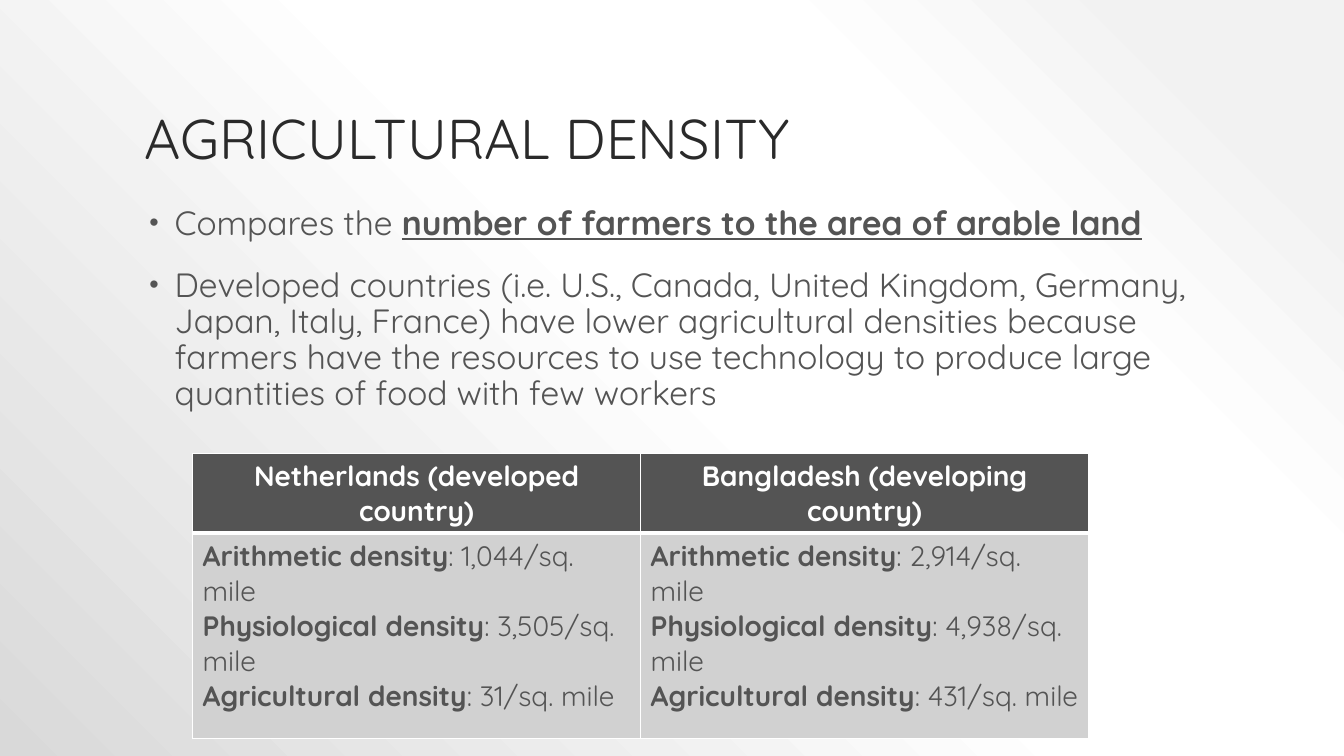
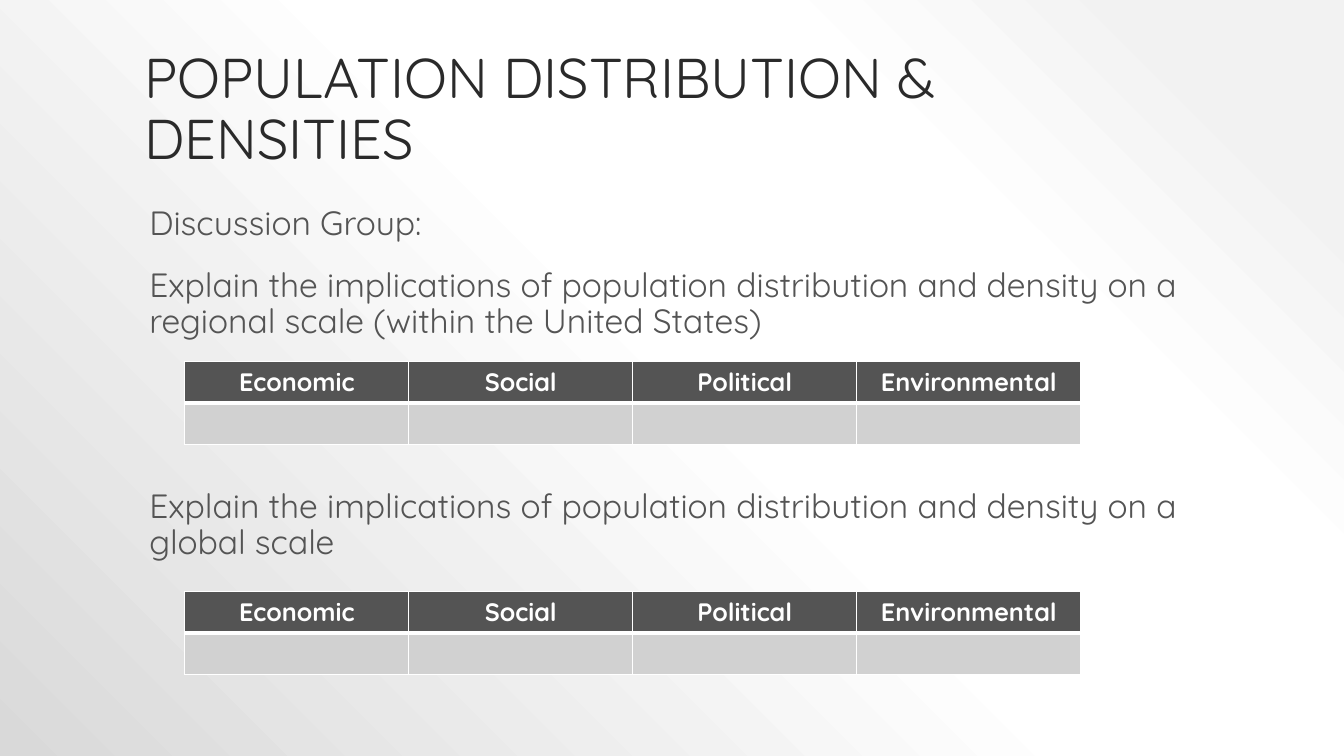
from lxml.etree import SubElement
from pptx import Presentation
from pptx.dml.color import RGBColor
from pptx.enum.text import MSO_ANCHOR as Anchor, PP_ALIGN as Align
from pptx.oxml.ns import qn
from pptx.util import Inches, Pt

WIDTH, HEIGHT = Inches(13.33), Inches(7.5)
FONT = "Quicksand"
COLORS = {
    "title": "2A2A2A",
    "text": "545454",
    "header": "545454",
    "cell": "D1D1D1",
    "white": "FFFFFF",
}
BACKDROP = [(10, "F2F2F2"), (28, "FFFFFF"), (48, "FFFFFF"), (100, "D9D9D9")]
PLAIN = {"bold": False, "underline": False}
BOLD = {"bold": True, "underline": False}
KEY_TERM = {"bold": True, "underline": True}
LEFT, SPAN, TABLE_SPAN = 10, 80, 66.67
TITLE_BOX = (LEFT, 4, SPAN, 19.33)
BODY_TOP = 26.67
BLOCK_GAP, QUESTION_GAP = 18, 106
ASPECTS = ["Economic", "Social", "Political", "Environmental"]


def across(share):
    return round(WIDTH * share / 100)


def down(share):
    return round(HEIGHT * share / 100)


def set_formats(target, formats):
    for name, value in formats.items():
        setattr(target, name, value)


def add_node(parent, tag, **attributes):
    return SubElement(parent, qn(tag), {key: str(value) for key, value in attributes.items()})


def add_color(parent, color):
    add_node(parent, "a:srgbClr", val=color)


def paint_backdrop(master):
    master.background.fill.gradient()
    gradient = next(master.element.iter(qn("a:gradFill")))
    for child in list(gradient):
        gradient.remove(child)
    stops = add_node(gradient, "a:gsLst")
    for position, color in BACKDROP:
        add_color(add_node(stops, "a:gs", pos=position * 1000), color)
    sweep = add_node(gradient, "a:path", path="circle")
    add_node(sweep, "a:fillToRect", l=100000, b=100000)


def write_runs(paragraph, runs, size, color):
    for words, style in runs:
        run = paragraph.add_run()
        run.text = words
        set_formats(run.font, {"name": FONT, "size": Pt(size), **style})
        run.font.color.rgb = RGBColor.from_string(COLORS[color])


def write_paragraphs(frame, paragraphs, size, color, formats):
    for index, runs in enumerate(paragraphs):
        paragraph = frame.add_paragraph() if index else frame.paragraphs[0]
        set_formats(paragraph, formats)
        write_runs(paragraph, runs, size, color)


def add_text_frame(slide, box, anchor):
    left, top, width, height = box
    frame = slide.shapes.add_textbox(across(left), down(top), across(width), down(height)).text_frame
    set_formats(frame, {"word_wrap": True, "vertical_anchor": anchor})
    return frame


def add_title(slide, title):
    frame = add_text_frame(slide, TITLE_BOX, Anchor.BOTTOM)
    write_paragraphs(frame, [[(title, PLAIN)]], 40, "title", {"line_spacing": 0.9})


def add_body(slide, height, paragraphs, gaps, bulleted):
    frame = add_text_frame(slide, (LEFT, BODY_TOP, SPAN, height), Anchor.TOP)
    write_paragraphs(frame, paragraphs, 24, "text", {"line_spacing": 0.9})
    margin, hanging = (0.3, -0.25) if bulleted else (0.05, 0)
    for paragraph, gap in zip(frame.paragraphs, gaps):
        paragraph.space_before = Pt(gap)
        properties = paragraph._p.get_or_add_pPr()
        properties.set("marL", str(Inches(margin)))
        properties.set("indent", str(Inches(hanging)))
        if bulleted:
            add_color(add_node(properties, "a:buClr"), COLORS["text"])
            add_node(properties, "a:buSzPct", val=80000)
            add_node(properties, "a:buFont", typeface="Arial")
            add_node(properties, "a:buChar", char="•")


def style_cell(cell, fill, edges):
    properties = cell._tc.get_or_add_tcPr()
    for edge in ("L", "R", "T", "B"):
        line = add_node(properties, f"a:ln{edge}", w=Pt(edges.get(edge, 1)))
        add_color(add_node(line, "a:solidFill"), COLORS["white"])
    cell.fill.solid()
    cell.fill.fore_color.rgb = RGBColor.from_string(COLORS[fill])


def add_grid(slide, left, top, row_heights, headings, entries, size):
    table = slide.shapes.add_table(
        2, len(headings), across(left), down(top), across(TABLE_SPAN), down(sum(row_heights))
    ).table
    for row, height in zip(table.rows, row_heights):
        row.height = down(height)
    for index, (heading, paragraphs) in enumerate(zip(headings, entries)):
        table.columns[index].width = across(TABLE_SPAN / len(headings))
        header, entry = table.cell(0, index), table.cell(1, index)
        style_cell(header, "header", {"B": 3})
        style_cell(entry, "cell", {"T": 3})
        write_paragraphs(header.text_frame, [[(heading, BOLD)]], size, "white", {"alignment": Align.CENTER})
        write_paragraphs(entry.text_frame, paragraphs, size, "text", {"alignment": Align.LEFT})


def density_entry(*densities):
    kinds = ("Arithmetic", "Physiological", "Agricultural")
    return [
        [(f"{kind} density", BOLD), (f": {density}/sq. mile", PLAIN)]
        for kind, density in zip(kinds, densities)
    ]


def build_agricultural_density(slide):
    add_title(slide, "AGRICULTURAL DENSITY")
    points = [
        [("Compares the ", PLAIN), ("number of farmers to the area of arable land", KEY_TERM)],
        [(
            "Developed countries (i.e. U.S., Canada, United Kingdom, Germany, Japan, Italy, France) "
            "have lower agricultural densities because farmers have the resources to use technology "
            "to produce large quantities of food with few workers",
            PLAIN,
        )],
    ]
    add_body(slide, 63.33, points, [BLOCK_GAP, BLOCK_GAP], True)
    countries = ["Netherlands (developed country)", "Bangladesh (developing country)"]
    entries = [density_entry("1,044", "3,505", "31"), density_entry("2,914", "4,938", "431")]
    add_grid(slide, 14.33, 60, (10.53, 27.2), countries, entries, 20)


def build_discussion(slide):
    add_title(slide, "POPULATION DISTRIBUTION & DENSITIES")
    question = "Explain the implications of population distribution and density on a "
    scales = ["regional scale (within the United States)", "global scale"]
    prompts = ["Discussion Group:"] + [question + scale for scale in scales]
    paragraphs = [[(prompt, PLAIN)] for prompt in prompts]
    add_body(slide, 70, paragraphs, [BLOCK_GAP, BLOCK_GAP, QUESTION_GAP], False)
    for top in (47.8, 78.25):
        add_grid(slide, 13.75, top, (5.5, 5.5), ASPECTS, [[] for _ in ASPECTS], 18)


def main():
    deck = Presentation()
    set_formats(deck, {"slide_width": WIDTH, "slide_height": HEIGHT})
    paint_backdrop(deck.slide_master)
    for build in (build_agricultural_density, build_discussion):
        build(deck.slides.add_slide(deck.slide_layouts[6]))
    deck.save("out.pptx")


if __name__ == "__main__":
    main()
